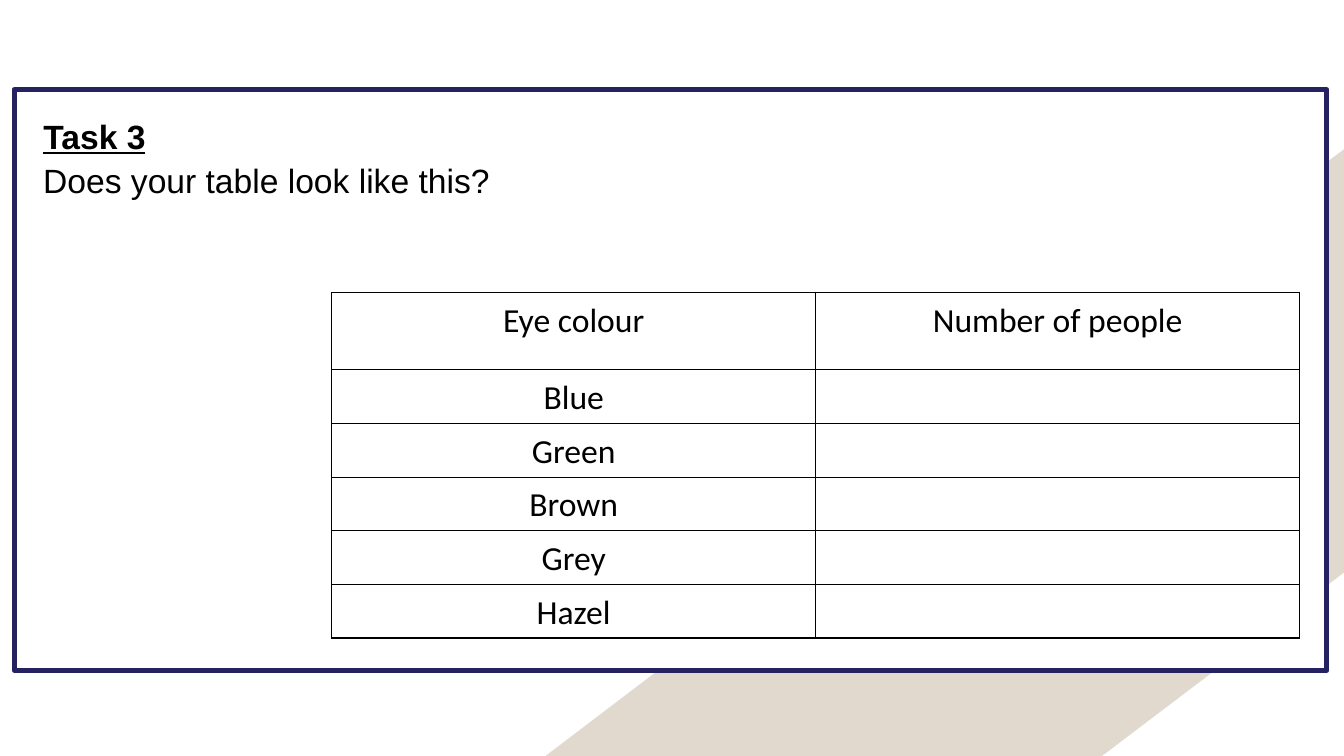
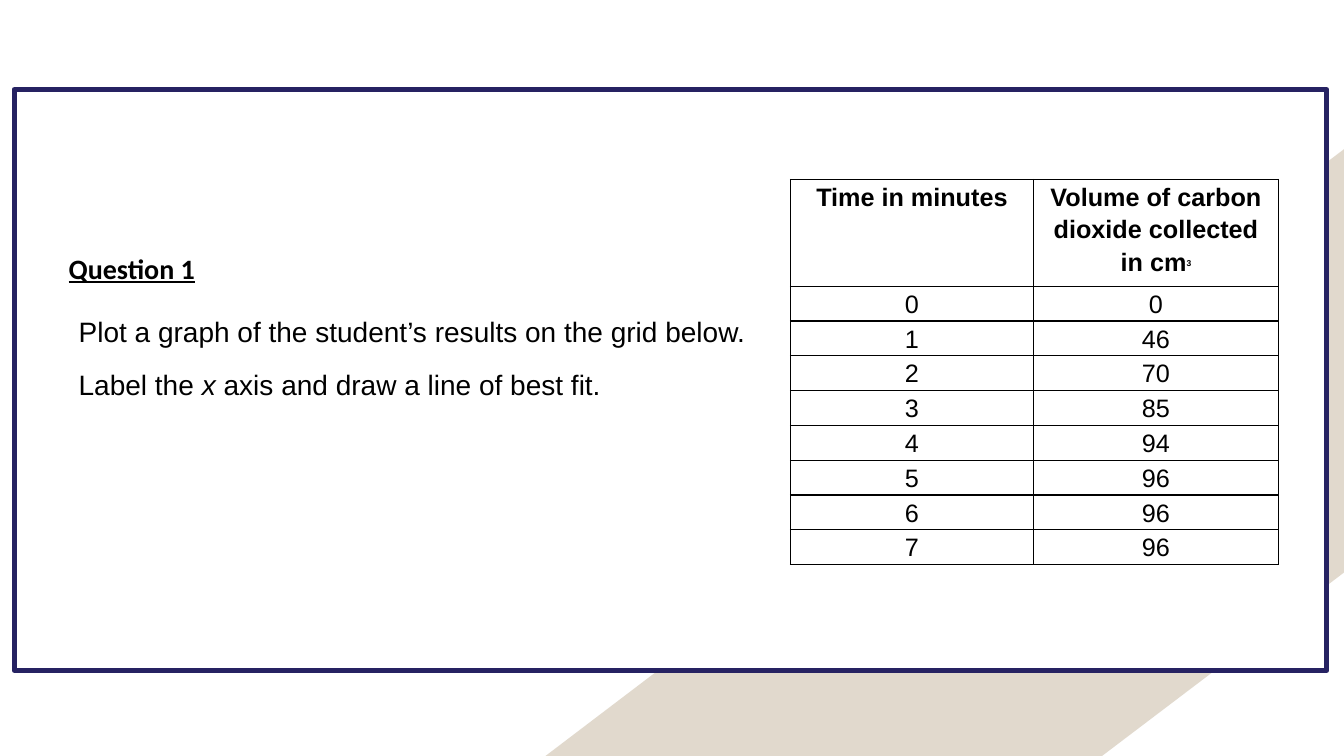
from lxml.etree import SubElement
from pptx import Presentation
from pptx.dml.color import RGBColor
from pptx.enum.shapes import MSO_SHAPE
from pptx.enum.text import MSO_ANCHOR, MSO_AUTO_SIZE, PP_ALIGN
from pptx.oxml import parse_xml
from pptx.oxml.ns import nsdecls, qn
from pptx.util import Inches, Pt

BLACK, WHITE, NAVY, SAND = "000000", "FFFFFF", "262262", "CEC1AD"
SIZE = (13.33, 7.5)
FRAME = (0.14, 0.89, 13.02, 5.76)
BAND = [(13.33, 1.48), (5.41, 7.5), (10.93, 7.5), (13.33, 5.68)]
LINE_SPACING = 1.07

SLIDES = [
    {
        "title": ("Task 3", "Arial", 24, (0.33, 1.07, 11.62, 0.45)),
        "body": {
            "place": (0.33, 1.51, 11.62, 0.5), "size": 24, "indent": 0,
            "lines": [[("Does your table look like this?", "")]],
        },
        "table": {
            "place": (3.29, 2.9, 9.61, 3.43), "columns": (4.8, 4.8), "header": 0.77,
            "font": "Calibri", "size": 24, "spacing": 1.07, "margins": (0.1, 0.05),
            "bold_header": False,
            "rows": [("Eye colour", "Number of people"), ("Blue", ""), ("Green", ""),
                     ("Brown", ""), ("Grey", ""), ("Hazel", "")],
        },
    },
    {
        "title": ("Question 1", "Calibri", 20, (0.58, 2.42, 7, 0.45)),
        "body": {
            "place": (0.58, 3.05, 7.2, 1), "size": 20, "indent": 0.1,
            "lines": [
                [("Plot a graph of the student’s results on the grid below.", "")],
                [("Label the ", ""), ("x", "italic"),
                 (" axis and draw a line of best fit.", "")],
            ],
        },
        "table": {
            "place": (7.84, 1.78, 4.83, 3.82), "columns": (2.41, 2.43), "header": 1.06,
            "font": "Arial", "size": 18, "spacing": 1.15, "margins": (0.07, 0),
            "bold_header": True,
            "rows": [("Time in minutes",
                      [("Volume of carbon dioxide collected in cm", ""), ("3", "super")]),
                     ("0", "0"), ("1", "46"), ("2", "70"), ("3", "85"),
                     ("4", "94"), ("5", "96"), ("6", "96"), ("7", "96")],
        },
    },
]


def colour(value):
    return RGBColor.from_string(value)


def inches(values):
    return [Inches(value) for value in values]


def write(para, spans, font, size, spacing=LINE_SPACING, align=PP_ALIGN.LEFT, bold=False):
    para.font.name, para.font.size, para.font.bold = font, Pt(size), bold
    para.font.color.rgb = colour(BLACK)
    para.line_spacing, para.alignment = spacing, align
    for text, style in spans:
        span = para.add_run()
        span.text = text
        if style == "italic":
            span.font.italic = True
        elif style == "super":
            span.font.size = Pt(10.5)
            span._r.get_or_add_rPr().set("baseline", "30000")


def decorate_layout(layout, page):
    start, *corners = [inches(point) for point in BAND]
    builder = page.shapes.build_freeform(*start)
    builder.add_line_segments(corners, close=True)
    band = builder.convert_to_shape()
    band.fill.solid()
    band.fill.fore_color.rgb = colour(SAND)
    band.line.fill.background()
    SubElement(next(band.element.iter(qn("a:srgbClr"))), qn("a:alpha"), val="60000")

    frame = page.shapes.add_shape(MSO_SHAPE.RECTANGLE, *inches(FRAME))
    frame.fill.solid()
    frame.fill.fore_color.rgb = colour(WHITE)
    frame.line.color.rgb = colour(NAVY)
    frame.line.width = Pt(3.75)
    SubElement(next(frame.element.iter(qn("a:ln"))), qn("a:round"))

    for position, shape in enumerate((band, frame), 2):
        shape.shadow.inherit = False
        layout.shapes.element.insert(position, shape.element)


def set_title(page, text, font, size, place):
    title = page.shapes.title
    title.left, title.top, title.width, title.height = inches(place)
    box = title.text_frame
    box.auto_size, box.vertical_anchor = MSO_AUTO_SIZE.NONE, MSO_ANCHOR.TOP
    para = box.paragraphs[0]
    write(para, [(text, "")], font, size, bold=True)
    para.font.underline = True


def add_body(page, place, size, indent, lines):
    box = page.shapes.add_textbox(*inches(place)).text_frame
    box.word_wrap = True
    box.margin_left = Inches(0.1 + indent)
    for number, spans in enumerate(lines):
        para = box.add_paragraph() if number else box.paragraphs[0]
        write(para, spans, "Arial", size)
        para.space_after = Pt(12)


def add_borders(cell):
    props = cell._tc.get_or_add_tcPr()
    for position, side in enumerate("LRTB"):
        props.insert(position, parse_xml(
            f'<a:ln{side} {nsdecls("a")} w="12700"><a:solidFill>'
            f'<a:srgbClr val="{BLACK}"/></a:solidFill></a:ln{side}>'))


def add_grid(page, place, columns, header, font, size, spacing, margins, bold_header, rows):
    table = page.shapes.add_table(len(rows), len(columns), *inches(place)).table
    table.first_row = table.horz_banding = False
    for column, width in zip(table.columns, columns):
        column.width = Inches(width)
    row_height = (place[3] - header) / (len(rows) - 1)
    for r, values in enumerate(rows):
        table.rows[r].height = Inches(row_height if r else header)
        for c, value in enumerate(values):
            cell = table.cell(r, c)
            cell.margin_left = cell.margin_right = Inches(margins[0])
            cell.margin_top = cell.margin_bottom = Inches(margins[1])
            cell.fill.solid()
            cell.fill.fore_color.rgb = colour(WHITE)
            add_borders(cell)
            spans = [(value, "")] if isinstance(value, str) else value
            write(cell.text_frame.paragraphs[0], spans if value else [], font, size,
                  spacing, PP_ALIGN.CENTER, bold_header and r == 0)


def main():
    deck = Presentation()
    deck.slide_width, deck.slide_height = inches(SIZE)
    layout = deck.slide_layouts.get_by_name("Title Only")
    for number, content in enumerate(SLIDES):
        page = deck.slides.add_slide(layout)
        if number == 0:
            decorate_layout(layout, page)
        set_title(page, *content["title"])
        add_body(page, **content["body"])
        add_grid(page, **content["table"])
    deck.save("out.pptx")


if __name__ == "__main__":
    main()
